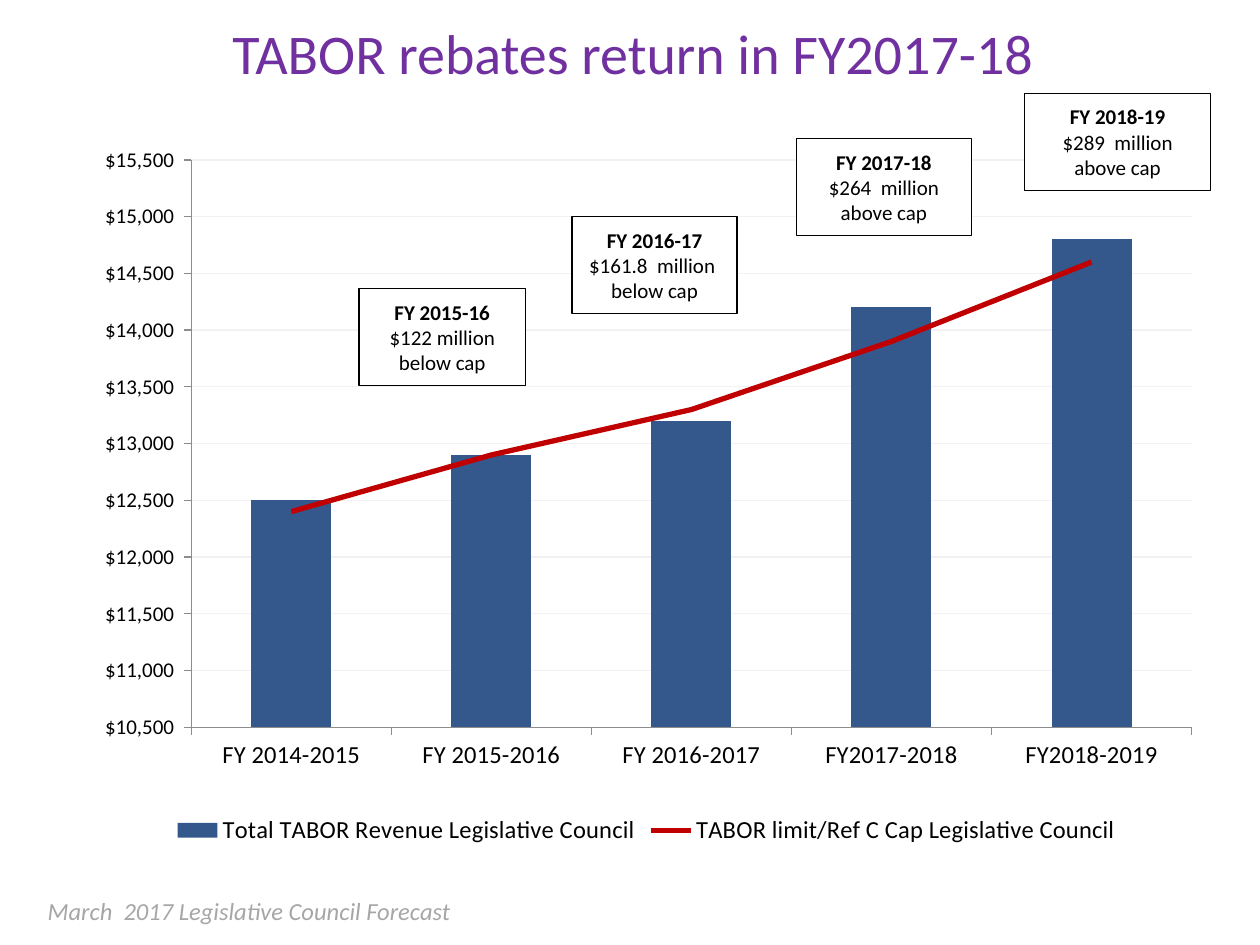
from pptx import Presentation
from pptx.chart.data import CategoryChartData
from pptx.dml.color import RGBColor
from pptx.enum.chart import XL_CHART_TYPE, XL_LEGEND_POSITION, XL_MARKER_STYLE, XL_TICK_MARK
from pptx.enum.shapes import MSO_SHAPE
from pptx.enum.text import MSO_ANCHOR, MSO_AUTO_SIZE, PP_ALIGN
from pptx.oxml import parse_xml
from pptx.oxml.ns import nsdecls, qn
from pptx.util import Inches, Pt

TITLE = "TABOR rebates return in FY2017-18"
SOURCE = "March  2017 Legislative Council Forecast"
YEARS = ["FY 2014-2015", "FY 2015-2016", "FY 2016-2017", "FY2017-2018", "FY2018-2019"]
SERIES = [
    ("Total TABOR Revenue Legislative Council", (12500, 12900, 13200, 14200, 14800)),
    ("TABOR limit/Ref C Cap Legislative Council", (12400, 12900, 13300, 13900, 14600)),
]
NOTES = [
    ("FY 2015-16", "$122 million below cap", 2.85, 2.29, 1.32),
    ("FY 2016-17", "$161.8  million  below cap", 4.54, 1.72, 1.31),
    ("FY 2017-18", "$264  million above cap", 6.32, 1.1, 1.39),
    ("FY 2018-19", "$289  million above cap", 8.13, 0.74, 1.48),
]
NOTE_H = 0.77
PLOT = {"x": 0.097, "y": 0.03, "w": 0.886, "h": 0.797}
THEME = {
    "font": "Calibri", "title": "7030A0", "source": "A6A6A6", "ink": "000000",
    "paper": "FFFFFF", "bar": "35588C", "cap": "C00000", "grid": "F2F2F2",
    "axis": "8C8C8C", "head": 32, "body": 14, "small": 12,
}


def tint(name):
    return RGBColor.from_string(THEME[name])


def style(font, size, color="ink", bold=False, italic=False):
    font.name = THEME["font"]
    font.size = Pt(THEME[size])
    font.color.rgb = tint(color)
    font.bold = bold
    font.italic = italic


def stroke(line, color, width):
    line.color.rgb = tint(color)
    line.width = Pt(width)


def add_cap(chart):
    bars = chart.plots[0]
    ser = bars.series[1]._element
    group = ser.getparent()
    line = parse_xml(
        f'<c:lineChart {nsdecls("c")}><c:grouping val="standard"/>'
        '<c:varyColors val="0"/><c:marker val="1"/></c:lineChart>'
    )
    for flag in ser.findall(qn("c:invertIfNegative")):
        ser.remove(flag)
    line.insert(2, ser)
    for axis in group.findall(qn("c:axId")):
        line.append(parse_xml(f'<c:axId {nsdecls("c")} val="{axis.get("val")}"/>'))
    group.addnext(line)
    cap = chart.plots[1].series[0]
    cap.smooth = False
    cap.marker.style = XL_MARKER_STYLE.NONE
    stroke(cap.format.line, "cap", 3)


def set_plot(chart):
    area = chart._chartSpace.chart.plotArea
    for old in area.findall(qn("c:layout")):
        area.remove(old)
    modes = '<c:xMode val="edge"/><c:yMode val="edge"/>'
    sizes = "".join(f'<c:{key} val="{val}"/>' for key, val in PLOT.items())
    area.insert(0, parse_xml(
        f'<c:layout {nsdecls("c")}><c:manualLayout><c:layoutTarget val="inner"/>'
        f"{modes}{sizes}</c:manualLayout></c:layout>"
    ))


def add_graph(slide):
    data = CategoryChartData()
    data.categories = YEARS
    for name, vals in SERIES:
        data.add_series(name, vals)
    chart = slide.shapes.add_chart(
        XL_CHART_TYPE.COLUMN_CLUSTERED,
        Inches(0.65), Inches(1.1), Inches(8.96), Inches(5.65), data,
    ).chart
    style(chart.font, "body")
    chart.has_title = False
    bars = chart.plots[0]
    bars.gap_width = 150
    bars.vary_by_categories = False
    fill = bars.series[0].format.fill
    fill.solid()
    fill.fore_color.rgb = tint("bar")
    add_cap(chart)
    set_plot(chart)

    for axis, size in ((chart.category_axis, "body"), (chart.value_axis, "small")):
        style(axis.tick_labels.font, size)
        axis.major_tick_mark = XL_TICK_MARK.OUTSIDE
        stroke(axis.format.line, "axis", 0.75)
    scale = chart.value_axis
    scale.minimum_scale, scale.maximum_scale, scale.major_unit = 10500, 15500, 500
    scale.has_major_gridlines = True
    stroke(scale.major_gridlines.format.line, "grid", 0.75)
    scale.tick_labels.number_format = '"$"#,##0_)'
    scale.tick_labels.number_format_is_linked = False

    chart.has_legend = True
    chart.legend.position = XL_LEGEND_POSITION.BOTTOM
    chart.legend.include_in_layout = False
    style(chart.legend.font, "body")


def add_note(slide, year, text, left, top, width):
    box = slide.shapes.add_shape(
        MSO_SHAPE.RECTANGLE, Inches(left), Inches(top), Inches(width), Inches(NOTE_H)
    )
    box.shadow.inherit = False
    box.fill.solid()
    box.fill.fore_color.rgb = tint("paper")
    stroke(box.line, "ink", 0.75)
    frame = box.text_frame
    frame.word_wrap = True
    frame.vertical_anchor = MSO_ANCHOR.MIDDLE
    frame.text = f"{year}\n{text}"
    for row, para in enumerate(frame.paragraphs):
        para.alignment = PP_ALIGN.CENTER
        style(para.font, "small", bold=row == 0)


def set_text(shape, text, size, color, align, italic=False):
    frame = shape.text_frame
    frame.text = text
    frame.word_wrap = True
    frame.auto_size = MSO_AUTO_SIZE.NONE
    frame.vertical_anchor = MSO_ANCHOR.TOP
    para = frame.paragraphs[0]
    para.alignment = align
    style(para.font, size, color, italic=italic)


def main():
    deck = Presentation()
    deck.slide_width, deck.slide_height = Inches(10), Inches(7.5)
    slide = deck.slides.add_slide(deck.slide_layouts[5])
    add_graph(slide)
    title = slide.shapes.title
    title.left, title.top = Inches(0.13), Inches(0.1)
    title.width, title.height = Inches(9.79), Inches(0.64)
    set_text(title, TITLE, "head", "title", PP_ALIGN.CENTER)
    foot = slide.shapes.add_textbox(Inches(0.28), Inches(7.06), Inches(4.25), Inches(0.34))
    set_text(foot, SOURCE, "body", "source", PP_ALIGN.LEFT, italic=True)
    for note in NOTES:
        add_note(slide, *note)
    deck.save("out.pptx")


if __name__ == "__main__":
    main()
